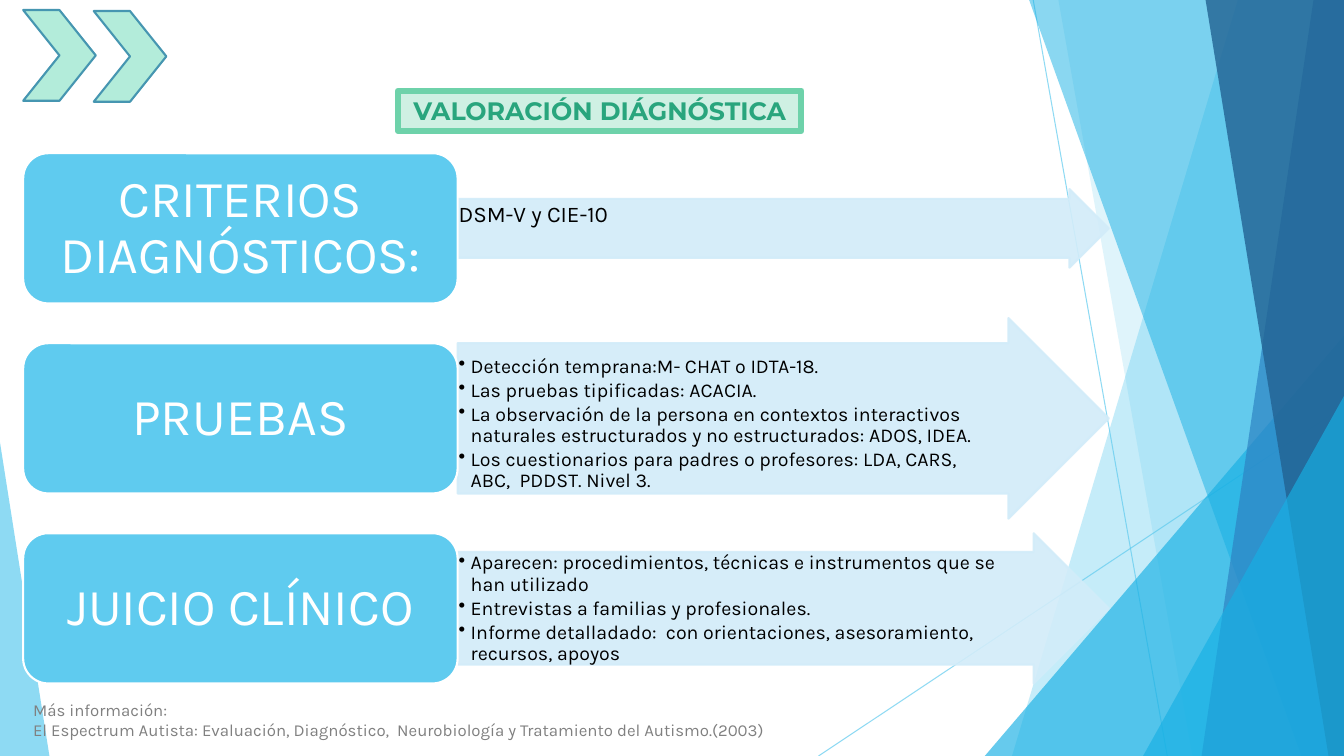
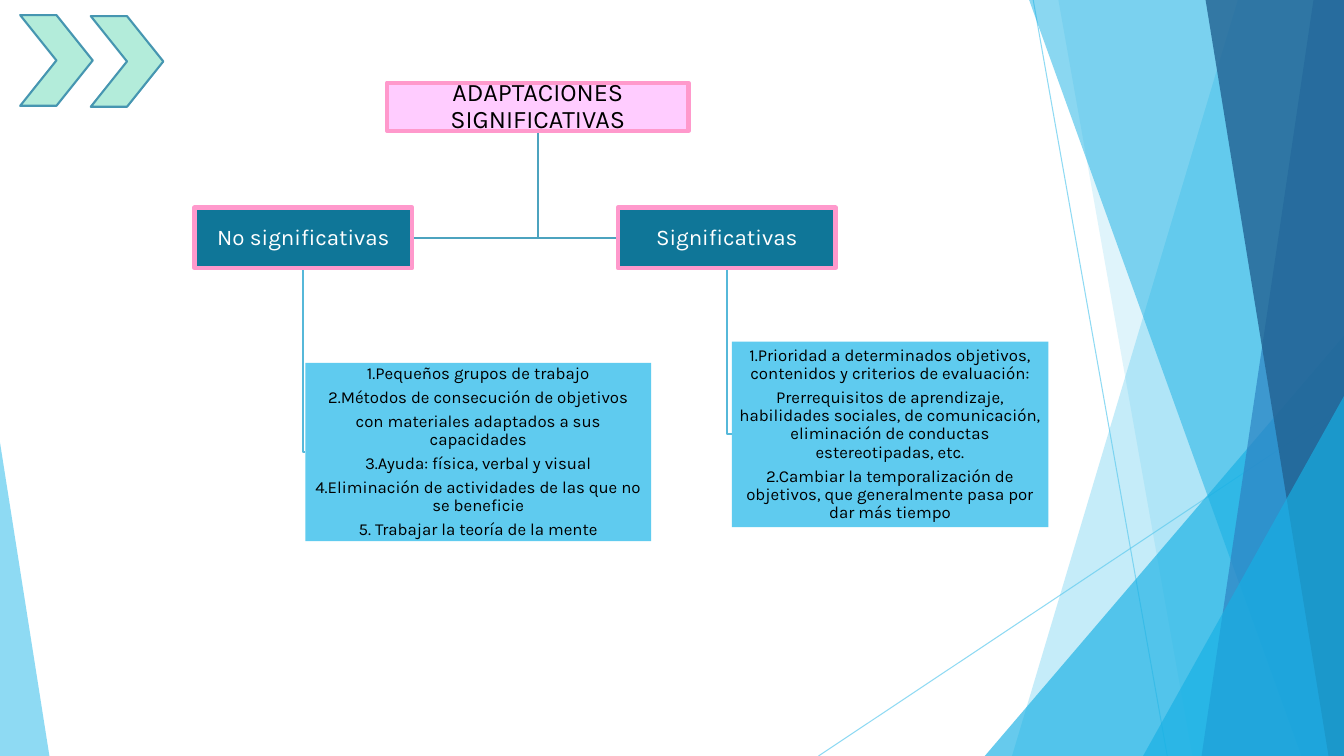
"""Build two slides on diagnostic assessment and curricular adaptations."""

import dataclasses

import pptx
import pptx.dml.color
import pptx.enum.shapes
import pptx.enum.text
import pptx.oxml.ns
import pptx.util
from lxml import etree


@dataclasses.dataclass(frozen=True)
class Theme:
    body_font: str = "Karla"
    title_font: str = "Montserrat"
    white: str = "FFFFFF"
    black: str = "000000"
    grey: str = "808080"
    sky: str = "5FCBEF"
    cyan: str = "17B0E4"
    blue: str = "2E83C3"
    navy: str = "226292"
    pale: str = "D2ECF9"
    teal: str = "0F7698"
    pink: str = "FFCCFF"
    rose: str = "FF99CC"
    mint: str = "B3ECDA"
    mint_edge: str = "4696B1"
    title_fill: str = "CFF0E3"
    title_edge: str = "6ED2AA"
    title_text: str = "29A57D"
    trunk: str = "4CA3BF"
    branch: str = "56B8D9"
    card_size: int = 37
    title_size: int = 18
    node_size: int = 16
    list_size: int = 14
    small_size: int = 12


theme = Theme()
PRESET = pptx.enum.shapes.MSO_SHAPE
ALIGN = pptx.enum.text.PP_ALIGN
ANCHOR = pptx.enum.text.MSO_ANCHOR
qn = pptx.oxml.ns.qn

cell = pptx.util.Inches(0.1)
columns, rows = 133.33, 75


def draw(page, kind, area, fill=None, line=None, width=1.5, opacity=100):
    lengths = [round(number * cell) for number in area]
    if kind == "line":
        shape = page.shapes.add_connector(pptx.enum.shapes.MSO_CONNECTOR.STRAIGHT, *lengths)
    elif kind == "text":
        shape = page.shapes.add_textbox(*lengths)
    elif kind in ("path line", "polygon"):
        points = list(zip(lengths[::2], lengths[1::2]))
        builder = page.shapes.build_freeform(*points[0])
        builder.add_line_segments(points[1:], close=kind == "polygon")
        shape = builder.convert_to_shape()
    else:
        shape = page.shapes.add_shape(kind, *lengths)
    if fill:
        shape.fill.solid()
        shape.fill.fore_color.rgb = pptx.dml.color.RGBColor.from_string(fill)
    elif kind != "line":
        shape.fill.background()
    if line:
        shape.line.color.rgb = pptx.dml.color.RGBColor.from_string(line)
        shape.line.width = pptx.util.Pt(width)
    else:
        shape.line.fill.background()
    properties = shape.element.spPr
    if opacity < 100:
        for colour in properties.iter(qn("a:srgbClr")):
            etree.SubElement(colour, qn("a:alpha"), val=str(opacity * 1000))
    etree.SubElement(properties, qn("a:effectLst"))
    return shape


def write(shape, lines, size, colour, align=ALIGN.CENTER, anchor=ANCHOR.MIDDLE,
          insets=(0.1, 0.1, 0.1, 0.1), spacing=0.9, after=0.35,
          bullet=False, font=theme.body_font, bold=False):
    frame = shape.text_frame
    frame.word_wrap = True
    frame.vertical_anchor = anchor
    (frame.margin_left, frame.margin_top,
     frame.margin_right, frame.margin_bottom) = [round(inset * cell) for inset in insets]
    for index, line in enumerate(lines):
        para = frame.add_paragraph() if index else frame.paragraphs[0]
        para.alignment = align
        para.line_spacing = spacing
        para.space_after = pptx.util.Pt(size * after)
        if bullet:
            properties = para._p.get_or_add_pPr()
            indent = round(1.2 * cell)
            properties.set("marL", str(indent))
            properties.set("indent", str(-indent))
            etree.SubElement(properties, qn("a:buChar"), char="•")
        span = para.add_run()
        span.text = line
        span.font.name = font
        span.font.size = pptx.util.Pt(size)
        span.font.bold = bold
        span.font.color.rgb = pptx.dml.color.RGBColor.from_string(colour)


deck = pptx.Presentation()
deck.slide_width = round(columns * cell)
deck.slide_height = rows * cell
blank = deck.slide_layouts[6]
for holder in list(blank.placeholders):
    holder.element.getparent().remove(holder.element)

assessment, adaptations = [deck.slides.add_slide(blank) for _ in range(2)]

for ends in [(102.5, 0, 115.8, rows), (columns, 40.3, 81.2, rows)]:
    draw(assessment, "line", ends, line=theme.sky, width=0.75, opacity=70)

facets = [
    ("band", 122.8, 100.4, theme.sky, 36),
    ("band", 105, 118.3, theme.sky, 20),
    ("peak", 97.7, 33.3, theme.cyan, 66),
    ("band", 102.1, 129.1, theme.cyan, 50),
    ("band", 130.3, 119.2, theme.blue, 70),
    ("band", 119.6, 131.8, theme.navy, 80),
    ("peak", 113.4, 39.3, theme.cyan, 66),
]
for kind, first, second, colour, opacity in facets:
    if kind == "band":
        corners = (first, 0, columns, 0, columns, rows, second, rows)
        draw(assessment, "polygon", corners, colour, opacity=opacity)
    else:
        area = (first, second, columns - first, rows - second)
        peak = draw(assessment, PRESET.ISOSCELES_TRIANGLE, area, colour, opacity=opacity)
        peak.adjustments[0] = 1
corner = draw(assessment, PRESET.ISOSCELES_TRIANGLE, (0, 43.9, 4.9, rows - 43.9),
              theme.sky, opacity=70)
corner.adjustments[0] = 0

for shape in list(assessment.shapes):
    blank.shapes.element.append(shape.element)

for page, left, top in [(assessment, 2.3, 1), (adaptations, 2, 1.5)]:
    for step in range(2):
        draw(page, PRESET.CHEVRON, (left + 7 * step, top + 0.1 * step, 7.2, 9),
             theme.mint, theme.mint_edge)

title = draw(assessment, PRESET.RECTANGLE, (39.5, 9, 40, 4),
             theme.title_fill, theme.title_edge, 4.5)
write(title, ["VALORACIÓN DIÁGNÓSTICA"], theme.title_size, theme.title_text,
      insets=(1, 0.5, 1, 0.5), spacing=1, after=0, font=theme.title_font, bold=True)

plain = dict(size=theme.node_size, spacing=1, after=0)
bulleted = dict(size=theme.list_size, after=0.15, bullet=True)
steps = [
    ("CRITERIOS DIAGNÓSTICOS:", 7.8, 0.1, plain, ["DSM-V y CIE-10"]),
    ("PRUEBAS", 19.9, 1.3, bulleted, [
        "Detección temprana:M- CHAT o IDTA-18.",
        "Las pruebas tipificadas: ACACIA.",
        "La observación de la persona en contextos interactivos naturales "
        "estructurados y no estructurados: ADOS, IDEA.",
        "Los cuestionarios para padres o profesores: LDA, CARS, ABC,  PDDST. Nivel 3.",
    ]),
    ("JUICIO CLÍNICO", 14.9, 0.1, bulleted, [
        "Aparecen: procedimientos, técnicas e instrumentos que se han utilizado",
        "Entrevistas a familias y profesionales.",
        "Informe detalladado:  con orientaciones, asesoramiento, recursos, apoyos",
    ]),
]
card_left, card_width, card_height, pitch = 2.3, 43.1, 14.9, 18.85
for index, (heading, height, inset, style, lines) in enumerate(steps):
    card_top = 15.2 + pitch * index
    arrow_top = card_top + (card_height - height) / 2
    arrow = draw(assessment, PRESET.RIGHT_ARROW,
                 (card_left + card_width, arrow_top, 64.6, height),
                 theme.pale, theme.pale, opacity=90)
    arrow.adjustments[0] = 0.75
    write(arrow, lines, colour=theme.black, align=ALIGN.LEFT, anchor=ANCHOR.TOP,
          insets=(0.1, inset, height / 4, 0.1), **style)
    card = draw(assessment, PRESET.ROUNDED_RECTANGLE,
                (card_left, card_top, card_width, card_height), theme.sky, theme.white)
    write(card, [heading], theme.card_size, theme.white, insets=(1.5, 0.8, 1.5, 0.8))

source = draw(assessment, "text", (2.3, 68.9, 81.2, 5))
write(source, [
    "Más información:",
    "El Espectrum Autista: Evaluación, Diagnóstico,  Neurobiología y Tratamiento "
    "del Autismo.(2003)",
], theme.small_size, theme.grey, ALIGN.LEFT, ANCHOR.TOP, (1, 0.5, 1, 0.5), 1, 0)

branches = [
    ("No significativas", 19.3, (30.3, 36, 34.3, 17.7), [
        "1.Pequeños grupos de trabajo",
        "2.Métodos de consecución de objetivos",
        "con materiales adaptados a sus capacidades",
        "3.Ayuda: física, verbal y visual",
        "4.Eliminación de actividades de las que no se beneficie",
        "5. Trabajar la teoría de la mente",
    ]),
    ("Significativas", 61.3, (72.6, 33.9, 31.4, 18.4), [
        "1.Prioridad a determinados objetivos, contenidos y criterios de evaluación:",
        "Prerrequisitos de aprendizaje, habilidades sociales, de comunicación, "
        "eliminación de conductas estereotipadas, etc.",
        "2.Cambiar la temporalización de objetivos, que generalmente pasa por dar más tiempo",
    ]),
]
root_left, root_top, root_width, root_height = 38.4, 8.2, 29.9, 4.8
node_top, node_width, node_height = 20.6, 21.6, 6
root_centre = root_left + root_width / 2
node_middle = node_top + node_height / 2
for name, left, leaf_area, lines in branches:
    near_edge = left if left > root_centre else left + node_width
    draw(adaptations, "path line",
         (root_centre, root_top + root_height, root_centre, node_middle, near_edge, node_middle),
         line=theme.trunk)
    stem = left + node_width / 2
    leaf_left, leaf_top, leaf_width, leaf_height = leaf_area
    leaf_middle = leaf_top + leaf_height / 2
    draw(adaptations, "path line",
         (stem, node_top + node_height, stem, leaf_middle, leaf_left, leaf_middle),
         line=theme.branch)
    node = draw(adaptations, PRESET.RECTANGLE, (left, node_top, node_width, node_height),
                theme.teal, theme.rose, 3)
    write(node, [name], theme.node_size, theme.white)
    leaf = draw(adaptations, PRESET.RECTANGLE, leaf_area, theme.sky)
    write(leaf, lines, theme.small_size, theme.black)

root = draw(adaptations, PRESET.RECTANGLE, (root_left, root_top, root_width, root_height),
            theme.pink, theme.rose, 3)
write(root, ["ADAPTACIONES SIGNIFICATIVAS"], theme.title_size, theme.black)

deck.save("out.pptx")
